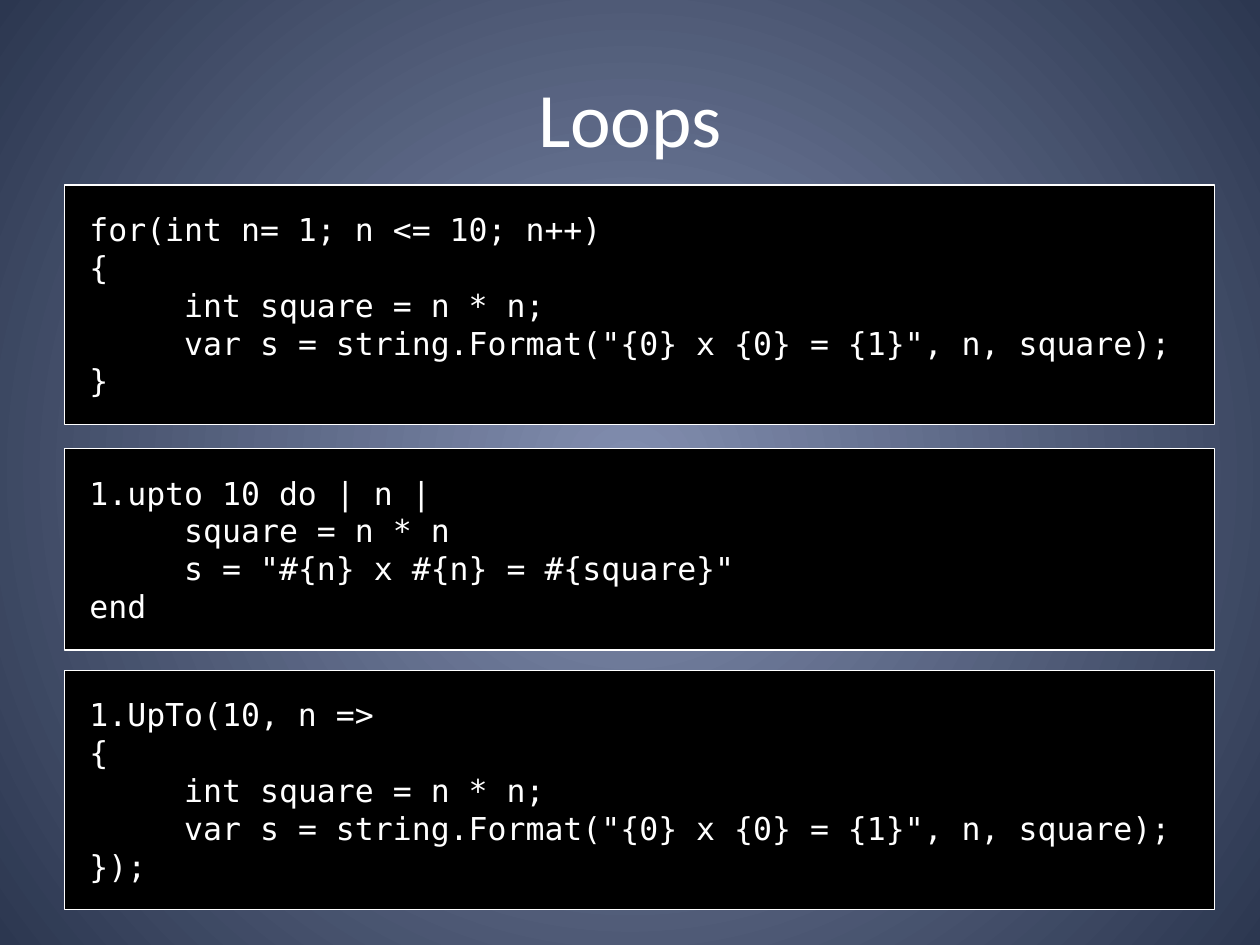
from dataclasses import dataclass

from lxml import etree
from pptx import Presentation
from pptx.dml.color import RGBColor
from pptx.enum import shapes, text
from pptx.oxml import ns
from pptx.util import Pt


@dataclass(frozen=True)
class Theme:
    """Colours, fonts and sizes of the slide."""
    glow: RGBColor = RGBColor(0x82, 0x8E, 0xAF)
    edge: RGBColor = RGBColor(0x2C, 0x37, 0x50)
    ink: RGBColor = RGBColor(0xFF, 0xFF, 0xFF)
    panel: RGBColor = RGBColor(0, 0, 0)
    title_font: str = "Calibri"
    code_font: str = "DejaVu Sans Mono"
    title_size: int = 44
    code_size: int = 18
    code_indent: float = 54.2
    line_pitch: float = 21.6
    inset: float = 14.4
    border: float = 0.75


THEME = Theme()
PANEL_LEFT, PANEL_WIDTH = 36.7, 657.4

FOR_LOOP = (
    (0, "for(int n= 1; n <= 10; n++)"),
    (0, "{"),
    (1, "int square = n * n;"),
    (1, 'var s = string.Format("{0} x {0} = {1}", n, square);'),
    (0, "}"),
)
RUBY_UPTO = (
    (0, "1.upto 10 do | n |"),
    (1, "square = n * n"),
    (1, 's = "#{n} x #{n} = #{square}"'),
    (0, "end"),
)
CSHARP_UPTO = (
    (0, "1.UpTo(10, n =>"),
    (0, "{"),
    *FOR_LOOP[2:4],
    (0, "});"),
)
PANELS = ((105.8, FOR_LOOP), (256.3, RUBY_UPTO), (383, CSHARP_UPTO))


def write(paragraph, words, *, font, size, align, indent=0):
    """Fill a paragraph with one formatted run."""
    paragraph.alignment = align
    if indent:
        paragraph._p.get_or_add_pPr().set("marL", str(Pt(indent)))
    run = paragraph.add_run()
    run.text = words
    run.font.name = font
    run.font.size = Pt(size)
    run.font.color.rgb = THEME.ink


def paint_background(slide):
    """Give the slide a gradient that glows from its centre."""
    fill = slide.background.fill
    fill.gradient()
    for stop, colour, position in zip(fill.gradient_stops, (THEME.glow, THEME.edge), (0, 1)):
        stop.color.rgb = colour
        stop.position = position
    gradient = slide.element.find(".//" + ns.qn("a:gradFill"))
    gradient.remove(gradient.find(ns.qn("a:lin")))
    circle = etree.SubElement(gradient, ns.qn("a:path"), path="circle")
    etree.SubElement(circle, ns.qn("a:fillToRect"), l="50000", t="50000", r="50000", b="50000")


def place_title(slide, words, left, top, width, height):
    """Place the heading in the title placeholder."""
    title = slide.shapes.title
    title.left, title.top, title.width, title.height = map(Pt, (left, top, width, height))
    title.text_frame.vertical_anchor = text.MSO_ANCHOR.MIDDLE
    write(title.text_frame.paragraphs[0], words, font=THEME.title_font,
          size=THEME.title_size, align=text.PP_ALIGN.CENTER)


def place_code(slide, lines, left, top, width):
    """Draw a code panel as tall as its lines need."""
    height = len(lines) * THEME.line_pitch + 2 * THEME.inset
    panel = slide.shapes.add_shape(shapes.MSO_SHAPE.RECTANGLE, *map(Pt, (left, top, width, height)))
    panel.shadow.inherit = False
    panel.fill.solid()
    panel.fill.fore_color.rgb = THEME.panel
    panel.line.color.rgb = THEME.ink
    panel.line.width = Pt(THEME.border)
    frame = panel.text_frame
    frame.word_wrap = True
    frame.auto_size = text.MSO_AUTO_SIZE.SHAPE_TO_FIT_TEXT
    frame.vertical_anchor = text.MSO_ANCHOR.TOP
    frame.margin_left = frame.margin_right = Pt(THEME.inset)
    frame.margin_top = frame.margin_bottom = Pt(THEME.inset)
    for number, (level, code) in enumerate(lines):
        paragraph = frame.add_paragraph() if number else frame.paragraphs[0]
        write(paragraph, code, font=THEME.code_font, size=THEME.code_size,
              align=text.PP_ALIGN.LEFT, indent=level * THEME.code_indent)


def main():
    """Build and save the slide."""
    deck = Presentation()
    deck.slide_width, deck.slide_height = Pt(720), Pt(540)
    slide = deck.slides.add_slide(deck.slide_layouts.get_by_name("Title Only"))
    paint_background(slide)
    place_title(slide, "Loops", 36, 21.6, 648, 90)
    for top, lines in PANELS:
        place_code(slide, lines, PANEL_LEFT, top, PANEL_WIDTH)
    deck.save("out.pptx")


if __name__ == "__main__":
    main()
